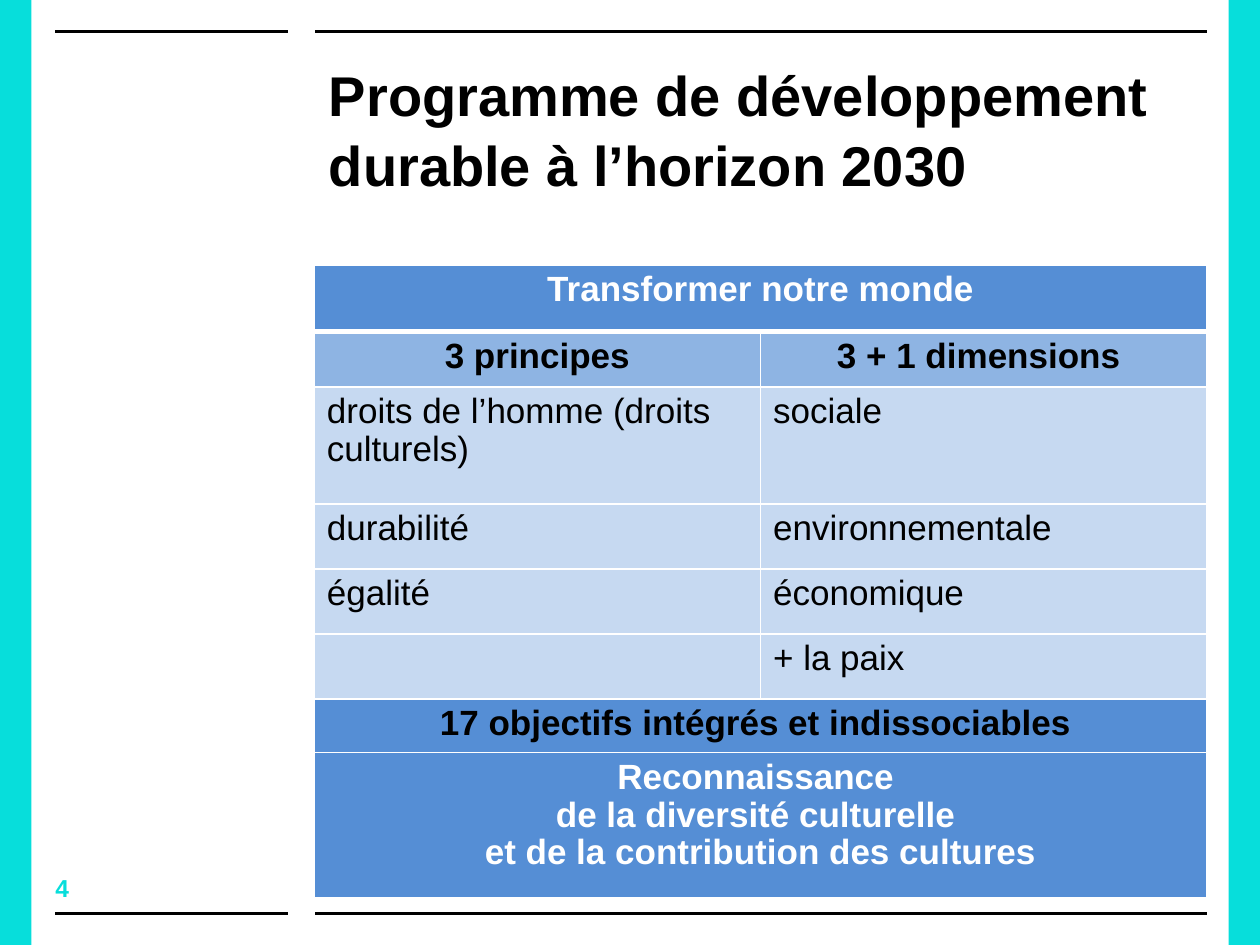
"""Build the slide on the 2030 sustainable development programme."""
import pptx
import pptx.chart.data
import pptx.dml.color
import pptx.enum.shapes
import pptx.enum.text
import pptx.oxml
import pptx.oxml.ns
import pptx.util
from lxml import etree

Pt = pptx.util.Pt
ALIGN = pptx.enum.text.PP_ALIGN
FONT = "Arial"
COLORS = {"rail": "07DEDB", "black": "000000", "white": "FFFFFF",
          "strong": "558ED5", "medium": "8EB4E3", "light": "C6D9F1"}

TITLE = "Programme de développement durable à l’horizon 2030"
NUMBER = "4"
HEAD = ("strong", "white", True)
SUBHEAD = ("medium", "black", True)
ITEM = ("light", "black", False)
SUMMARY = ("strong", "black", True)
ROWS = [
    (38.2, HEAD, ["Transformer notre monde"]),
    (31.6, SUBHEAD, ["3 principes", "3 + 1 dimensions "]),
    (66.8, ITEM, ["droits de l’homme (droits culturels)", "sociale"]),
    (37.2, ITEM, ["durabilité", "environnementale"]),
    (37.2, ITEM, ["égalité", "économique"]),
    (37.2, ITEM, ["", "+ la paix"]),
    (29.6, SUMMARY, ["17 objectifs intégrés et indissociables "]),
    (83.2, HEAD, ["Reconnaissance \nde la diversité culturelle \n"
                  "et de la contribution des cultures"]),
]
RAILS = [0, 702]
RULE_SPANS = [(31.7, 164.3), (180, 690)]
RULE_TOPS = [18, 522]


def rgb(name):
    return pptx.dml.color.RGBColor.from_string(COLORS[name])


def style(tf, size, color, bold, align=ALIGN.LEFT, spacing=1.0):
    for p in tf.paragraphs:
        p.alignment = align
        p.line_spacing = spacing
        for font in [p.font] + [r.font for r in p.runs]:
            font.name, font.size, font.bold = FONT, Pt(size), bold
            font.color.rgb = rgb(color)


def clear_margins(tf):
    tf.margin_left = tf.margin_top = tf.margin_right = tf.margin_bottom = 0
    tf.word_wrap = True
    tf.vertical_anchor = pptx.enum.text.MSO_ANCHOR.TOP


def set_borders(cell, top, bottom):
    tc_pr = cell._tc.get_or_add_tcPr()
    widths = {"lnL": 1, "lnR": 1, "lnT": top, "lnB": bottom}
    for i, (tag, width) in enumerate(widths.items()):
        ln = etree.Element(pptx.oxml.ns.qn("a:" + tag), w=str(int(Pt(width))))
        fill = etree.SubElement(ln, pptx.oxml.ns.qn("a:solidFill"))
        etree.SubElement(fill, pptx.oxml.ns.qn("a:srgbClr"), val=COLORS["white"])
        tc_pr.insert(i, ln)


def add_frame(s):
    for left in RAILS:
        rail = s.shapes.add_shape(pptx.enum.shapes.MSO_SHAPE.RECTANGLE,
                                  Pt(left), 0, Pt(18), Pt(540))
        rail.shadow.inherit = False
        rail.fill.solid()
        rail.fill.fore_color.rgb = rgb("rail")
        rail.line.fill.background()
    for y in RULE_TOPS:
        for x1, x2 in RULE_SPANS:
            rule = s.shapes.add_connector(pptx.enum.shapes.MSO_CONNECTOR.STRAIGHT,
                                          Pt(x1), Pt(y), Pt(x2), Pt(y))
            rule.line.width = Pt(2)
            rule.line.color.rgb = rgb("black")
            etree.SubElement(rule._element.spPr, pptx.oxml.ns.qn("a:effectLst"))


def add_texts(s):
    title = s.shapes.title
    title.left, title.top, title.width, title.height = Pt(188), Pt(33), Pt(510), Pt(131)
    title.text_frame.text = TITLE
    clear_margins(title.text_frame)
    style(title.text_frame, 32, "black", True, spacing=1.04)
    number = s.shapes.add_textbox(Pt(31.7), Pt(499), Pt(82), Pt(17))
    number.text_frame.text = NUMBER
    clear_margins(number.text_frame)
    style(number.text_frame, 14, "rail", True)


def add_goals_table(s):
    height = sum(row[0] for row in ROWS)
    table = s.shapes.add_table(len(ROWS), 2, Pt(179.6), Pt(151.4),
                               Pt(510), Pt(height)).table
    table.horz_banding = False
    for i, (row_height, (fill, color, bold), texts) in enumerate(ROWS):
        table.rows[i].height = Pt(row_height)
        if len(texts) == 1:
            table.cell(i, 0).merge(table.cell(i, 1))
        for j in range(2):
            cell = table.cell(i, j)
            cell.fill.solid()
            cell.fill.fore_color.rgb = rgb(fill)
            set_borders(cell, 3 if i == 1 else 1, 3 if i == 0 else 1)
            if j < len(texts):
                cell.text_frame.text = texts[j]
            style(cell.text_frame, 20, color, bold,
                  ALIGN.CENTER if bold else ALIGN.LEFT, 0.97)


def main():
    prs = pptx.Presentation()
    prs.slide_width, prs.slide_height = Pt(720), Pt(540)
    s = prs.slides.add_slide(prs.slide_layouts[5])
    add_frame(s)
    add_texts(s)
    add_goals_table(s)
    prs.save("out.pptx")


if __name__ == "__main__":
    main()
